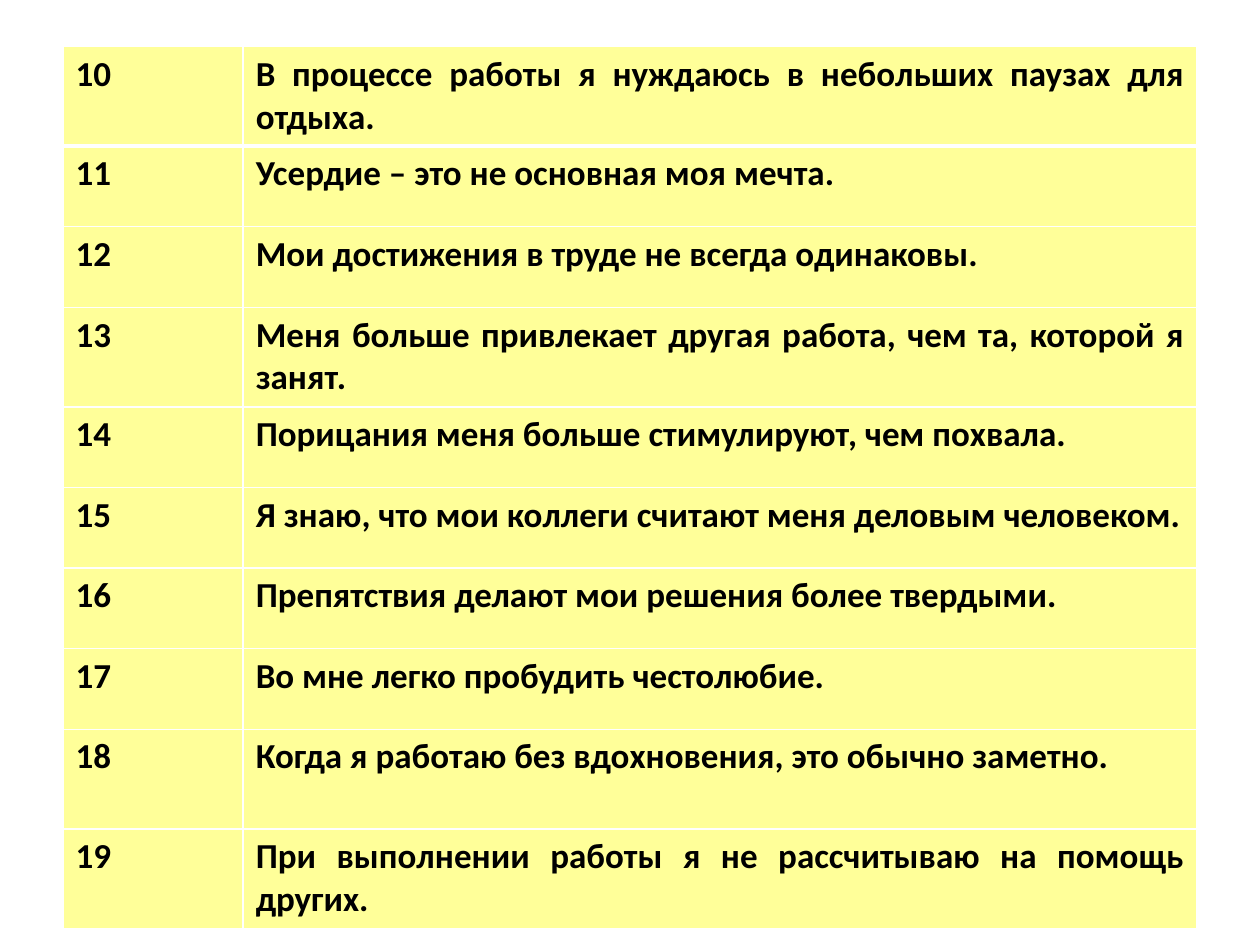
from lxml import etree
from pptx import Presentation
from pptx.dml.color import RGBColor
from pptx.enum.text import PP_ALIGN
from pptx.oxml.ns import qn
from pptx.util import Inches, Pt

JUSTIFY = PP_ALIGN.JUSTIFY
COLORS = {"cell": "FFFF99", "border": "FFFFFF", "text": "000000"}
FONT = "Calibri"
FIRST_NUMBER = 10
COL_WIDTHS = [1.43, 7.57]
SHORT_ROW, TALL_ROW = 0.64, 0.79
TALL_NUMBERS = {10, 13, 18, 19}

STATEMENTS = [
    "В процессе работы я нуждаюсь в небольших паузах для отдыха.",
    "Усердие – это не основная моя мечта.",
    "Мои достижения в труде не всегда одинаковы.",
    "Меня больше привлекает другая работа, чем та, которой я занят.",
    "Порицания меня больше стимулируют, чем похвала.",
    "Я знаю, что мои коллеги считают меня деловым человеком.",
    "Препятствия делают мои решения более твердыми.",
    "Во мне легко пробудить честолюбие.",
    "Когда я работаю без вдохновения, это обычно заметно.",
    "При выполнении работы я не рассчитываю на помощь других.",
]


def add_border(cell, side, points):
    tc_pr = cell._tc.get_or_add_tcPr()
    ln = etree.SubElement(tc_pr, qn("a:ln" + side), w=str(Pt(points)))
    fill = etree.SubElement(ln, qn("a:solidFill"))
    etree.SubElement(fill, qn("a:srgbClr"), val=COLORS["border"])


prs = Presentation()
prs.slide_width, prs.slide_height = Inches(10), Inches(7.5)
s = prs.slides.add_slide(prs.slide_layouts[6])

# Table grid
heights = [TALL_ROW if n in TALL_NUMBERS else SHORT_ROW
           for n in range(FIRST_NUMBER, FIRST_NUMBER + len(STATEMENTS))]
table = s.shapes.add_table(
    len(STATEMENTS), len(COL_WIDTHS), Inches(0.5), Inches(0.37),
    Inches(sum(COL_WIDTHS)), Inches(sum(heights))).table
for column, width in zip(table.columns, COL_WIDTHS):
    column.width = Inches(width)

# Numbered statements, with a thicker rule below the first row
for i, statement in enumerate(STATEMENTS):
    table.rows[i].height = Inches(heights[i])
    for j, text in enumerate([str(FIRST_NUMBER + i), statement]):
        cell = table.cell(i, j)
        widths = {"L": 1, "R": 1, "T": 3 if i == 1 else 1, "B": 3 if i == 0 else 1}
        for side, points in widths.items():
            add_border(cell, side, points)
        cell.fill.solid()
        cell.fill.fore_color.rgb = RGBColor.from_string(COLORS["cell"])
        p = cell.text_frame.paragraphs[0]
        p.alignment = JUSTIFY
        r = p.add_run()
        r.text = text
        r.font.name = FONT
        r.font.size = Pt(20)
        r.font.bold = True
        r.font.color.rgb = RGBColor.from_string(COLORS["text"])

prs.save("out.pptx")
